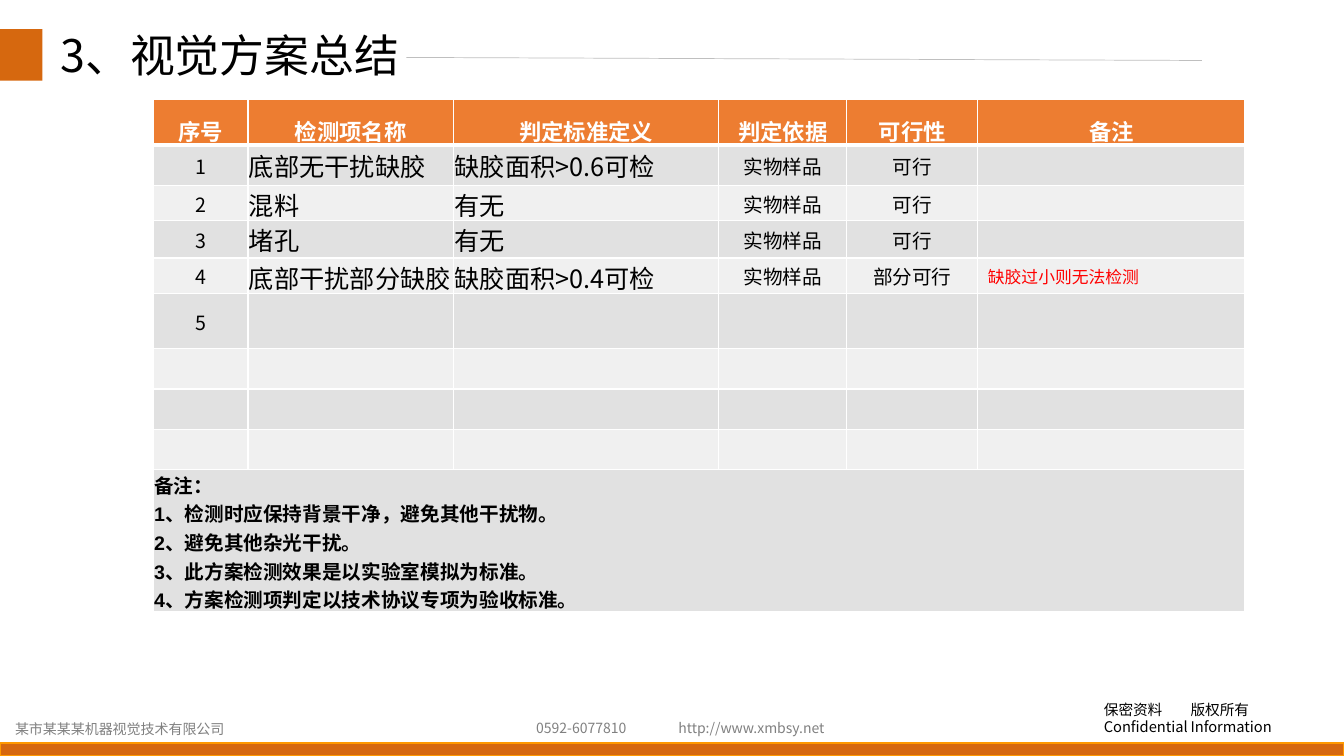
from dataclasses import dataclass
from typing import Optional

from lxml.etree import SubElement
from pptx import Presentation
from pptx.dml.color import RGBColor as Color
from pptx.enum.shapes import MSO_CONNECTOR as Connector, MSO_SHAPE as Shape
from pptx.enum.text import MSO_ANCHOR as Anchor, PP_ALIGN as Align
from pptx.oxml.ns import qn
from pptx.util import Emu, Inches, Pt


@dataclass(frozen=True)
class Theme:
    sans: str = "Noto Sans CJK SC"
    arial: str = "Arial"
    black: str = "000000"
    white: str = "FFFFFF"
    gray: str = "808080"
    rule: str = "BFBFBF"
    red: str = "FF0000"
    accent: str = "D6680F"
    accent_edge: str = "FF9900"
    header: str = "ED7D31"
    bands: tuple[str, str] = ("E1E1E1", "F0F0F0")
    title_size: float = 32
    item_size: float = 18
    header_size: float = 16
    body_size: float = 14
    remark_size: float = 12
    notice_size: float = 10.5
    footer_size: float = 10


@dataclass(frozen=True)
class Area:
    """A place in percent of the slide's width and height."""
    left: float
    top: float
    width: float
    height: float


@dataclass(frozen=True)
class Style:
    size: float
    color: str = "000000"
    font: str = "Noto Sans CJK SC"
    bold: bool = False
    align: Align = Align.LEFT
    spacing: Optional[float] = None


@dataclass(frozen=True)
class Label:
    area: Area
    lines: tuple[str, ...]
    style: Style
    tab: Optional[float] = None


@dataclass(frozen=True)
class Block:
    area: Area
    edge: Optional[str] = None


THEME = Theme()
WIDTH, HEIGHT = Inches(13.33), Inches(7.5)

FOOTER = Style(THEME.footer_size, THEME.gray)
HEAD = Style(THEME.header_size, THEME.white, bold=True, align=Align.CENTER, spacing=1.3)
CENTERED = Style(THEME.body_size, align=Align.CENTER)
ITEM = Style(THEME.item_size)
REMARK = Style(THEME.remark_size, THEME.red)
NOTE = Style(THEME.body_size, font=THEME.arial, bold=True)

BLOCKS = (
    Block(Area(0, 98.27, 100, 1.73), THEME.accent_edge),
    Block(Area(0, 3.87, 3.15, 6.8)),
)
LABELS = (
    Label(Area(81.4, 92, 16.28, 6), ("保密资料\t版权所有", "Confidential\tInformation"),
          Style(THEME.notice_size), tab=6.45),
    Label(Area(49.74, 94.53, 12.53, 3.6), ("http://www.xmbsy.net",), FOOTER),
    Label(Area(39.16, 94.53, 9.75, 3.6), ("0592-6077810",), FOOTER),
    Label(Area(0.38, 94.67, 17.63, 3.6), ("某市某某某机器视觉技术有限公司",), FOOTER),
    Label(Area(3.75, 3.87, 29.86, 9.47), ("3、视觉方案总结",),
          Style(THEME.title_size, spacing=0.9)),
)
TITLE_RULE = Area(30.23, 7.6, 59.19, 0.4)

TABLE = Area(11.4, 13.2, 81.24, 67.72)
COLUMNS = (7.05, 15.3, 19.73, 9.53, 9.75, 19.88)
ROWS = (6, 5.33, 4.67, 4.93, 4.67, 7.33, 5.33, 5.33, 5.33, 18.8)
COLUMN_STYLES = (CENTERED, ITEM, ITEM, CENTERED, CENTERED, REMARK)
HEADINGS = ("序号", "检测项名称", "判定标准定义", "判定依据", "可行性", "备注")
CHECKS = (
    ("1", "底部无干扰缺胶", "缺胶面积>0.6可检", "实物样品", "可行", ""),
    ("2", "混料", "有无", "实物样品", "可行", ""),
    ("3", "堵孔", "有无", "实物样品", "可行", ""),
    ("4", "底部干扰部分缺胶", "缺胶面积>0.4可检", "实物样品", "部分可行", "缺胶过小则无法检测"),
    ("5",) + ("",) * 5,
) + (("",) * 6,) * 3
NOTES = (
    "备注：",
    "1、检测时应保持背景干净，避免其他干扰物。",
    "2、避免其他杂光干扰。",
    "3、此方案检测效果是以实验室模拟为标准。",
    "4、方案检测项判定以技术协议专项为验收标准。",
)


def across(share: float) -> Emu:
    return Emu(round(WIDTH * share / 100))


def down(share: float) -> Emu:
    return Emu(round(HEIGHT * share / 100))


def place(area: Area) -> tuple[Emu, Emu, Emu, Emu]:
    return across(area.left), down(area.top), across(area.width), down(area.height)


def write(frame, lines: tuple[str, ...], style: Style, tab: Optional[float] = None) -> None:
    for index, line in enumerate(lines):
        para = frame.paragraphs[0] if index == 0 else frame.add_paragraph()
        para.text = line
        para.alignment = style.align
        if style.spacing:
            para.line_spacing = style.spacing
        if tab:
            stops = SubElement(para._p.get_or_add_pPr(), qn("a:tabLst"))
            SubElement(stops, qn("a:tab"), pos=str(across(tab)), algn="l")
        font = para.font
        font.name, font.size, font.bold = style.font, Pt(style.size), style.bold
        font.color.rgb = Color.from_string(style.color)


def add_block(page, block: Block) -> None:
    box = page.shapes.add_shape(Shape.RECTANGLE, *place(block.area))
    box.shadow.inherit = False
    box.fill.solid()
    box.fill.fore_color.rgb = Color.from_string(THEME.accent)
    if block.edge:
        box.line.color.rgb = Color.from_string(block.edge)
        box.line.width = Pt(1)
    else:
        box.line.fill.background()


def add_label(page, label: Label) -> None:
    frame = page.shapes.add_textbox(*place(label.area)).text_frame
    frame.word_wrap = True
    write(frame, label.lines, label.style, label.tab)


def add_rule(page, area: Area) -> None:
    left, top, width, height = place(area)
    rule = page.shapes.add_connector(Connector.STRAIGHT, left, top, left + width, top + height)
    rule.line.color.rgb = Color.from_string(THEME.rule)
    rule.line.width = Pt(0.5)
    SubElement(rule._element.spPr, qn("a:effectLst"))


def dress(cell, fill: str, bottom: float = 1) -> None:
    """Give a cell white borders and a plain fill."""
    for side, width in (("lnL", 1), ("lnR", 1), ("lnT", 1), ("lnB", bottom)):
        border = SubElement(cell._tc.get_or_add_tcPr(), qn(f"a:{side}"), w=str(Pt(width)))
        SubElement(SubElement(border, qn("a:solidFill")), qn("a:srgbClr"), val=THEME.white)
    cell.fill.solid()
    cell.fill.fore_color.rgb = Color.from_string(fill)


def tighten(cell) -> None:
    cell.vertical_anchor = Anchor.MIDDLE
    cell.margin_left = cell.margin_right = cell.margin_top = Inches(0.01)
    cell.margin_bottom = 0


def add_summary(page) -> None:
    table = page.shapes.add_table(len(ROWS), len(COLUMNS), *place(TABLE)).table
    table.first_row = table.horz_banding = False
    for column, share in zip(table.columns, COLUMNS):
        column.width = across(share)
    for row, share in zip(table.rows, ROWS):
        row.height = down(share)
    for cell, heading in zip(table.rows[0].cells, HEADINGS):
        write(cell.text_frame, (heading,), HEAD)
        dress(cell, THEME.header, bottom=3)
    for number, check in enumerate(CHECKS, start=1):
        for cell, text, style in zip(table.rows[number].cells, check, COLUMN_STYLES):
            tighten(cell)
            if style is REMARK:
                cell.margin_left = Inches(0.1)
            write(cell.text_frame, (text,), style if text else REMARK)
            dress(cell, THEME.bands[(number - 1) % 2])
    notes = table.cell(len(ROWS) - 1, 0)
    notes.merge(table.cell(len(ROWS) - 1, len(COLUMNS) - 1))
    tighten(notes)
    write(notes.text_frame, NOTES, NOTE)
    dress(notes, THEME.bands[0])


def main() -> None:
    deck = Presentation()
    deck.slide_width, deck.slide_height = WIDTH, HEIGHT
    page = deck.slides.add_slide(deck.slide_layouts[6])
    for block in BLOCKS:
        add_block(page, block)
    add_rule(page, TITLE_RULE)
    for label in LABELS:
        add_label(page, label)
    add_summary(page)
    deck.save("out.pptx")


if __name__ == "__main__":
    main()
